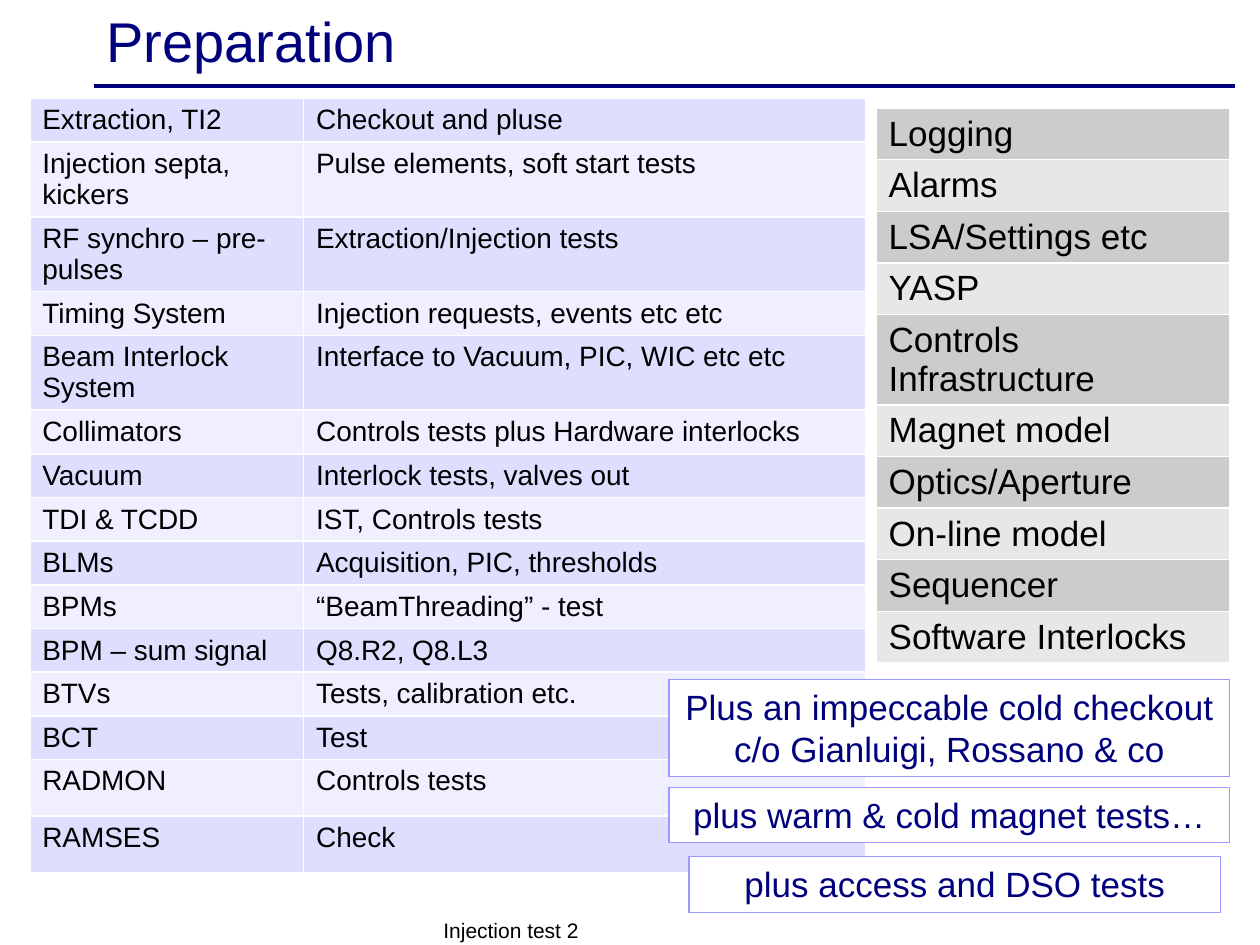
"""Build the injection test preparation slide."""
from dataclasses import dataclass

from lxml.etree import SubElement
from pptx import Presentation
from pptx.dml.color import RGBColor
from pptx.enum.shapes import MSO_CONNECTOR, MSO_SHAPE
from pptx.enum.text import MSO_ANCHOR, PP_ALIGN
from pptx.oxml.ns import qn
from pptx.util import Cm, Pt


@dataclass(frozen=True)
class Theme:
    font: str = "Arial"
    navy: str = "00007D"
    black: str = "000000"
    white: str = "FFFFFF"
    outline: str = "9999FF"
    lilac: tuple = ("DEDEFF", "EFEFFF")
    grey: tuple = ("CCCCCC", "E7E7E7")
    title: int = 32
    large: int = 20
    body: int = 16
    small: int = 12


SYSTEMS = [
    ("Extraction, TI2", "Checkout and pluse"),
    ("Injection septa, kickers", "Pulse elements, soft start tests"),
    ("RF synchro – pre-pulses", "Extraction/Injection tests"),
    ("Timing System", "Injection requests, events etc etc"),
    ("Beam Interlock System", "Interface to Vacuum, PIC, WIC etc etc"),
    ("Collimators", "Controls tests plus Hardware interlocks"),
    ("Vacuum", "Interlock tests, valves out"),
    ("TDI & TCDD", "IST, Controls tests"),
    ("BLMs", "Acquisition, PIC, thresholds"),
    ("BPMs", "“BeamThreading” - test"),
    ("BPM – sum signal", "Q8.R2, Q8.L3"),
    ("BTVs", "Tests, calibration etc."),
    ("BCT", "Test"),
    ("RADMON", "Controls tests"),
    ("RAMSES", "Check"),
]
SYSTEM_HEIGHTS = {1: 1.51, 2: 1.51, 4: 1.51, 13: 1.14, 14: 1.14}
SOFTWARE = [
    ("Logging",), ("Alarms",), ("LSA/Settings etc",), ("YASP",),
    ("Controls Infrastructure",), ("Magnet model",), ("Optics/Aperture",),
    ("On-line model",), ("Sequencer",), ("Software Interlocks",),
]
NOTES = [
    ("plus warm & cold magnet tests…", 13.49, 15.87, 11.3, 1.12),
    ("plus access and DSO tests", 13.89, 17.27, 10.72, 1.12),
    ("Plus an impeccable cold checkout c/o Gianluigi, Rossano & co", 13.49, 13.7, 11.3, 1.96),
]


def write(frame, text, *, font, size, color, align=PP_ALIGN.LEFT,
          anchor=MSO_ANCHOR.TOP):
    frame.word_wrap = True
    frame.vertical_anchor = anchor
    para = frame.paragraphs[0]
    para.alignment = align
    span = para.add_run()
    span.text = text
    span.font.name = font
    span.font.size = Pt(size)
    span.font.color.rgb = RGBColor.from_string(color)


class SlideBuilder:
    def __init__(self, page, theme):
        self.page = page
        self.theme = theme

    def label(self, text, left, top, width, height, **style):
        box = self.page.shapes.add_textbox(Cm(left), Cm(top), Cm(width), Cm(height))
        write(box.text_frame, text, font=self.theme.font, **style)

    def rule(self, left, right, height):
        line = self.page.shapes.add_connector(
            MSO_CONNECTOR.STRAIGHT, Cm(left), Cm(height), Cm(right), Cm(height))
        line.line.color.rgb = RGBColor.from_string(self.theme.navy)
        line.line.width = Pt(2)
        SubElement(line._element.spPr, qn("a:effectLst"))

    def note(self, text, left, top, width, height):
        box = self.page.shapes.add_shape(
            MSO_SHAPE.RECTANGLE, Cm(left), Cm(top), Cm(width), Cm(height))
        box.shadow.inherit = False
        box.fill.solid()
        box.fill.fore_color.rgb = RGBColor.from_string(self.theme.white)
        box.line.color.rgb = RGBColor.from_string(self.theme.outline)
        box.line.width = Pt(0.75)
        write(box.text_frame, text, font=self.theme.font, size=self.theme.large,
              color=self.theme.navy, align=PP_ALIGN.CENTER)

    def border(self, cell):
        properties = cell._tc.get_or_add_tcPr()
        for position, side in enumerate(("a:lnL", "a:lnR", "a:lnT", "a:lnB")):
            edge = properties.makeelement(qn(side), {"w": str(Pt(1))})
            fill = SubElement(edge, qn("a:solidFill"))
            SubElement(fill, qn("a:srgbClr"), val=self.theme.white)
            properties.insert(position, edge)

    def table(self, rows, left, top, widths, row_height, special, bands, size):
        heights = [special.get(index, row_height) for index in range(len(rows))]
        table = self.page.shapes.add_table(
            len(rows), len(widths), Cm(left), Cm(top),
            Cm(sum(widths)), Cm(sum(heights))).table
        table.first_row = False
        table.horz_banding = False
        for column, width in zip(table.columns, widths):
            column.width = Cm(width)
        for index, (row, texts) in enumerate(zip(table.rows, rows)):
            row.height = Cm(heights[index])
            for cell, text in zip(row.cells, texts):
                cell.margin_bottom = Cm(0)
                cell.fill.solid()
                cell.fill.fore_color.rgb = RGBColor.from_string(bands[index % 2])
                self.border(cell)
                write(cell.text_frame, text, font=self.theme.font, size=size,
                      color=self.theme.black)


def main():
    theme = Theme()
    deck = Presentation()
    deck.slide_width, deck.slide_height = Cm(25.4), Cm(19.05)
    builder = SlideBuilder(deck.slides.add_slide(deck.slide_layouts[6]), theme)
    builder.rule(1.9, 24.9, 1.73)
    builder.label("Preparation", 1.9, 0.08, 22.86, 1.45, size=theme.title,
                  color=theme.navy, anchor=MSO_ANCHOR.MIDDLE)
    builder.label("Injection test 2", 8.69, 18.42, 8.05, 0.7, size=theme.small,
                  color=theme.black, anchor=MSO_ANCHOR.BOTTOM)
    builder.table(SYSTEMS, 0.6, 1.98, (5.52, 11.34), 0.88, SYSTEM_HEIGHTS,
                  theme.lilac, theme.body)
    builder.table(SOFTWARE, 17.66, 2.18, (7.14,), 1.04, {4: 1.81},
                  theme.grey, theme.large)
    for note in NOTES:
        builder.note(*note)
    deck.save("out.pptx")


if __name__ == "__main__":
    main()
